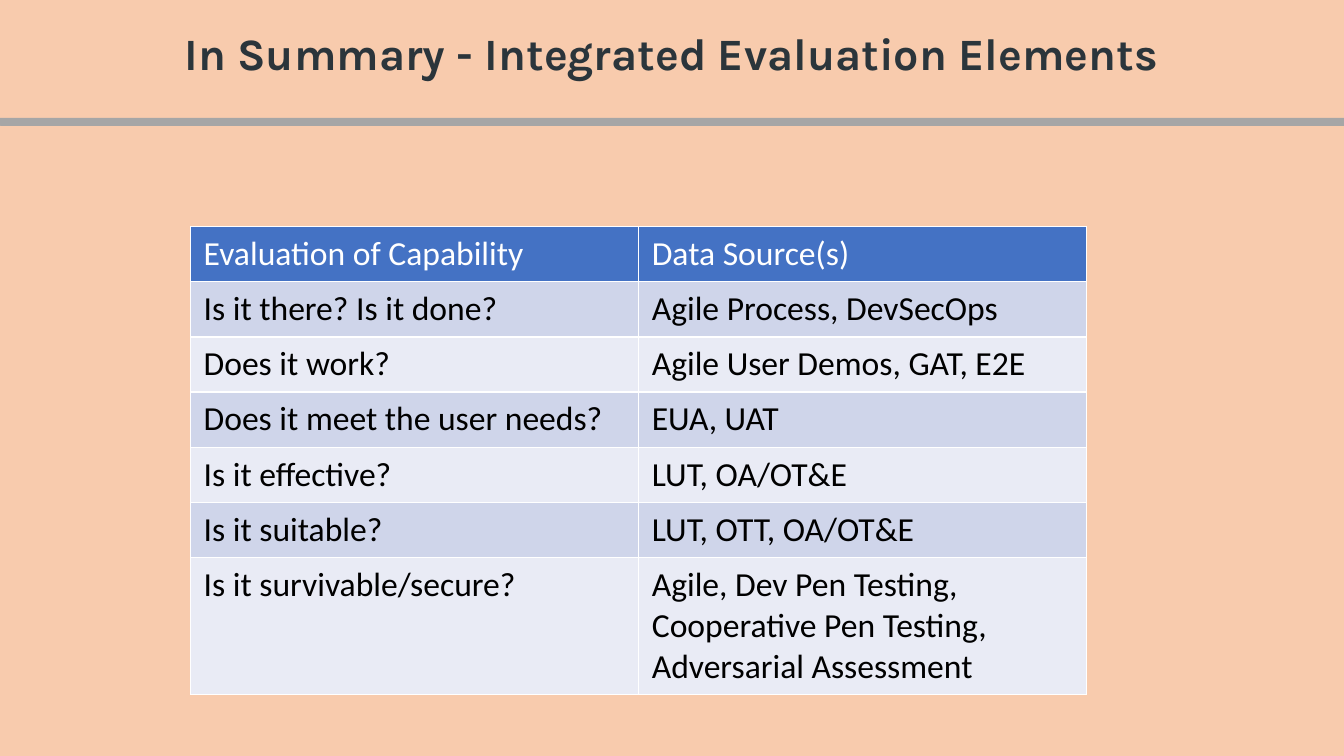
from lxml.etree import SubElement as Sub
from pptx import Presentation
from pptx.dml.color import RGBColor as RGB
from pptx.enum.shapes import MSO_SHAPE as Shape
from pptx.enum.text import MSO_ANCHOR as Anchor, PP_ALIGN as Align
from pptx.oxml.ns import qn
from pptx.util import Inches, Pt

PEACH = RGB(0xF8, 0xCB, 0xAD)
GREY = RGB(0xA6, 0xA6, 0xA6)
SLATE = RGB(0x2B, 0x35, 0x3B)
BLUE = RGB(0x44, 0x72, 0xC4)
BANDS = [RGB(0xE9, 0xEB, 0xF5), RGB(0xCF, 0xD5, 0xEA)]
WHITE = RGB(0xFF, 0xFF, 0xFF)
BLACK = RGB(0, 0, 0)

ROWS = [
    ("Evaluation of Capability", "Data Source(s)"),
    ("Is it there? Is it done?", "Agile Process, DevSecOps"),
    ("Does it work?", "Agile User Demos, GAT, E2E"),
    ("Does it meet the user needs?", "EUA, UAT"),
    ("Is it effective?", "LUT, OA/OT&E"),
    ("Is it suitable?", "LUT, OTT, OA/OT&E"),
    ("Is it survivable/secure?",
     "Agile, Dev Pen Testing, Cooperative Pen Testing, Adversarial Assessment"),
]


def style(para, name, size, color, bold=False):
    """Set the font of a paragraph's runs."""
    for run in para.runs:
        font = run.font
        font.name, font.size, font.bold = name, Pt(size), bold
        font.color.rgb = color


def add_bar(slide, left, top, width, height):
    """Draw the grey rule below the title."""
    bar = slide.shapes.add_shape(Shape.RECTANGLE, left, top, width, height)
    bar.shadow.inherit = False
    bar.fill.solid()
    bar.fill.fore_color.rgb = GREY
    bar.line.color.rgb = GREY
    bar.line.width = Pt(0.5)


def add_title(slide, text, left, top, width, height):
    """Place and format the title."""
    title = slide.shapes.title
    title.left, title.top, title.width, title.height = left, top, width, height
    frame = title.text_frame
    frame.text = text
    frame.word_wrap = True
    frame.vertical_anchor = Anchor.MIDDLE
    para = frame.paragraphs[0]
    para.alignment = Align.LEFT
    para.line_spacing = 0.9
    style(para, "Karla", 32, SLATE, True)


def add_edges(cell):
    """Give a cell thin white borders."""
    props = cell._tc.get_or_add_tcPr()
    for side in ("lnL", "lnR", "lnT", "lnB"):
        line = Sub(props, qn(f"a:{side}"), w=str(Pt(1)))
        Sub(Sub(line, qn("a:solidFill")), qn("a:srgbClr"), val=str(WHITE))


def fill_cell(cell, text, fill, color):
    """Write and format one table cell."""
    cell.text = text
    cell.margin_left = cell.margin_right = Inches(0.13)
    cell.margin_top = cell.margin_bottom = Inches(0.07)
    add_edges(cell)
    cell.fill.solid()
    cell.fill.fore_color.rgb = fill
    style(cell.text_frame.paragraphs[0], "Calibri", 24, color)


def add_grid(slide, left, top, width, height):
    """Build the table, whose last row takes the height left over."""
    grid = slide.shapes.add_table(len(ROWS), 2, left, top, width, height).table
    for col in grid.columns:
        col.width = width // 2
    step = Inches(0.54)
    for num, (row, texts) in enumerate(zip(grid.rows, ROWS)):
        last = num == len(ROWS) - 1
        row.height = height - step * num if last else step
        fill = BANDS[num % 2] if num else BLUE
        color = BLACK if num else WHITE
        for cell, text in zip(row.cells, texts):
            fill_cell(cell, text, fill, color)


def main():
    """Build and save the slide."""
    deck = Presentation()
    deck.slide_width, deck.slide_height = Inches(13.33), Inches(7.5)
    slide = deck.slides.add_slide(deck.slide_layouts[5])
    back = slide.background.fill
    back.solid()
    back.fore_color.rgb = PEACH
    add_bar(slide, 0, Inches(1.17), deck.slide_width, Inches(0.07))
    add_title(slide, "In Summary - Integrated Evaluation Elements",
              Inches(1.73), Inches(0.14), Inches(11.4), Inches(0.84))
    add_grid(slide, Inches(1.89), Inches(2.25), Inches(8.89), Inches(4.59))
    deck.save("out.pptx")


if __name__ == "__main__":
    main()
